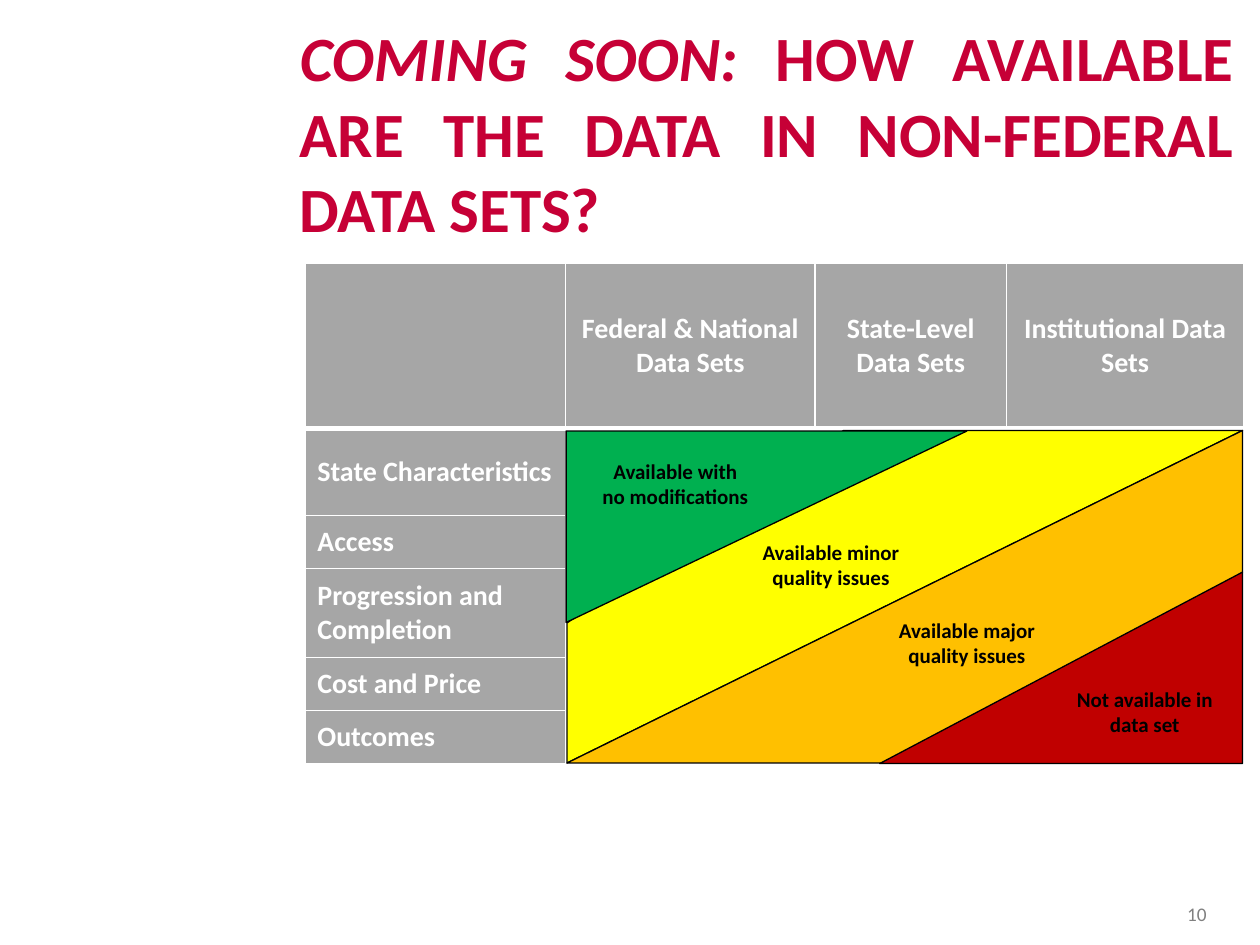
"""Build the slide on data availability in non-federal data sets."""
import pptx
import pptx.dml.color
import pptx.enum.shapes
import pptx.enum.text
import pptx.oxml
import pptx.oxml.ns
import pptx.util

Pt = pptx.util.Pt
ALIGN = pptx.enum.text.PP_ALIGN
MIDDLE = pptx.enum.text.MSO_ANCHOR.MIDDLE
TRIANGLE = pptx.enum.shapes.MSO_SHAPE.RIGHT_TRIANGLE

WHITE, BLACK, GREY, CRIMSON = "FFFFFF", "000000", "A6A6A6", "C60036"
TITLE = [("COMING SOON: ", True),
         ("HOW AVAILABLE ARE THE DATA IN NON-FEDERAL DATA SETS?", False)]
HEADERS = ["", "Federal & National Data Sets", "State-Level Data Sets",
           "Institutional Data Sets"]
TOPICS = ["State Characteristics", "Access", "Progression and Completion",
          "Cost and Price", "Outcomes"]
COLUMN_WIDTHS = [149, 142.5, 109.5, 135.5]
ROW_HEIGHTS = [94.5, 49.5, 30.3, 51, 30.3, 30.3]
TABLE_LEFT, TABLE_TOP = 174.2, 150.5
LEFT, TOP, RIGHT, BOTTOM = 323.5, 246.3, 710, 436.3
BANDS = [
    ("FFFF00", [(LEFT, BOTTOM), (LEFT, 356.4), (482.4, TOP), (RIGHT, TOP)]),
    ("FFC000", [(RIGHT, TOP), (RIGHT, 326.9), (551.5, BOTTOM), (LEFT, BOTTOM)]),
]
CORNERS = [("00B050", LEFT, TOP, 229, 109.4, 90),
           ("C00000", RIGHT - 207.3, BOTTOM - 109.4, 207.3, 109.4, 270)]
LABELS = [(["Available with", "no modifications"], 334.8, 258.5, 102.2),
          (["Available minor quality issues"], 427.7, 304.6, 94.3),
          (["Available major quality issues"], 505.4, 349.2, 94.3),
          (["Not available in data set"], 607, 388.8, 94.3)]


def color(value):
    return pptx.dml.color.RGBColor.from_string(value)


def set_font(font, size, value, bold=True):
    font.name, font.size, font.bold = "Calibri", Pt(size), bold
    font.color.rgb = color(value)


def add_text(page, lines, left, top, width, height, size, value, bold=True):
    box = page.shapes.add_textbox(Pt(left), Pt(top), Pt(width), Pt(height))
    frame = box.text_frame
    frame.word_wrap = True
    frame.text = "\n".join(lines)
    for para in frame.paragraphs:
        para.alignment = ALIGN.CENTER
        set_font(para.font, size, value, bold)
    return frame


def paint(shape, value):
    shape.shadow.inherit = False
    shape.fill.solid()
    shape.fill.fore_color.rgb = color(value)
    shape.line.color.rgb = color(BLACK)
    shape.line.width = Pt(0.75)


def set_borders(cell, widths):
    properties = cell._tc.get_or_add_tcPr()
    for index, (side, width) in enumerate(zip("LRTB", widths)):
        line = pptx.oxml.parse_xml(
            f'<a:ln{side} {pptx.oxml.ns.nsdecls("a")} w="{Pt(width)}"><a:solidFill>'
            f'<a:srgbClr val="{WHITE}"/></a:solidFill></a:ln{side}>')
        properties.insert(index, line)


def add_title(page):
    frame = add_text(page, [""], 164.2, 7.2, 547.9, 90.7, 36, CRIMSON)
    para = frame.paragraphs[0]
    para.alignment = ALIGN.JUSTIFY
    for text, italic in TITLE:
        span = para.add_run()
        span.text = text
        set_font(span.font, 36, CRIMSON)
        span.font.italic = italic


def add_grid(page):
    rows = [HEADERS] + [[topic, "", "", ""] for topic in TOPICS]
    table = page.shapes.add_table(
        len(rows), len(HEADERS), Pt(TABLE_LEFT), Pt(TABLE_TOP),
        Pt(sum(COLUMN_WIDTHS)), Pt(sum(ROW_HEIGHTS))).table
    for column, width in zip(table.columns, COLUMN_WIDTHS):
        column.width = Pt(width)
    for r, (row, height) in enumerate(zip(rows, ROW_HEIGHTS)):
        table.rows[r].height = Pt(height)
        for c, text in enumerate(row):
            cell = table.cell(r, c)
            cell.text = text
            cell.vertical_anchor = MIDDLE
            para = cell.text_frame.paragraphs[0]
            para.alignment = ALIGN.CENTER if r == 0 else ALIGN.LEFT
            set_font(para.font, 16, WHITE)
            if r == 0 or c == 0:
                cell.fill.solid()
                cell.fill.fore_color.rgb = color(GREY)
            else:
                cell.fill.background()
            set_borders(cell, (1, 1, 3 if r == 1 else 1, 3 if r == 0 else 1))


def add_band(page, value, points):
    builder = page.shapes.build_freeform(*points[0], scale=Pt(1))
    builder.add_line_segments(points[1:], close=True)
    paint(builder.convert_to_shape(), value)


def add_corner(page, value, left, top, width, height, rotation):
    shift = (width - height) / 2
    shape = page.shapes.add_shape(
        TRIANGLE, Pt(left + shift), Pt(top - shift), Pt(height), Pt(width))
    shape.rotation = rotation
    paint(shape, value)


def main():
    deck = pptx.Presentation()
    deck.slide_width, deck.slide_height = Pt(720), Pt(540)
    page = deck.slides.add_slide(deck.slide_layouts[6])
    add_title(page)
    number = add_text(page, ["10"], 648, 504, 72, 36, 11, "808080", False)
    number.vertical_anchor = MIDDLE
    add_grid(page)
    for band, corner in zip(BANDS, CORNERS):
        add_band(page, *band)
        add_corner(page, *corner)
    for lines, left, top, width in LABELS:
        add_text(page, lines, left, top, width, 36, 12, BLACK)
    deck.save("out.pptx")


if __name__ == "__main__":
    main()
